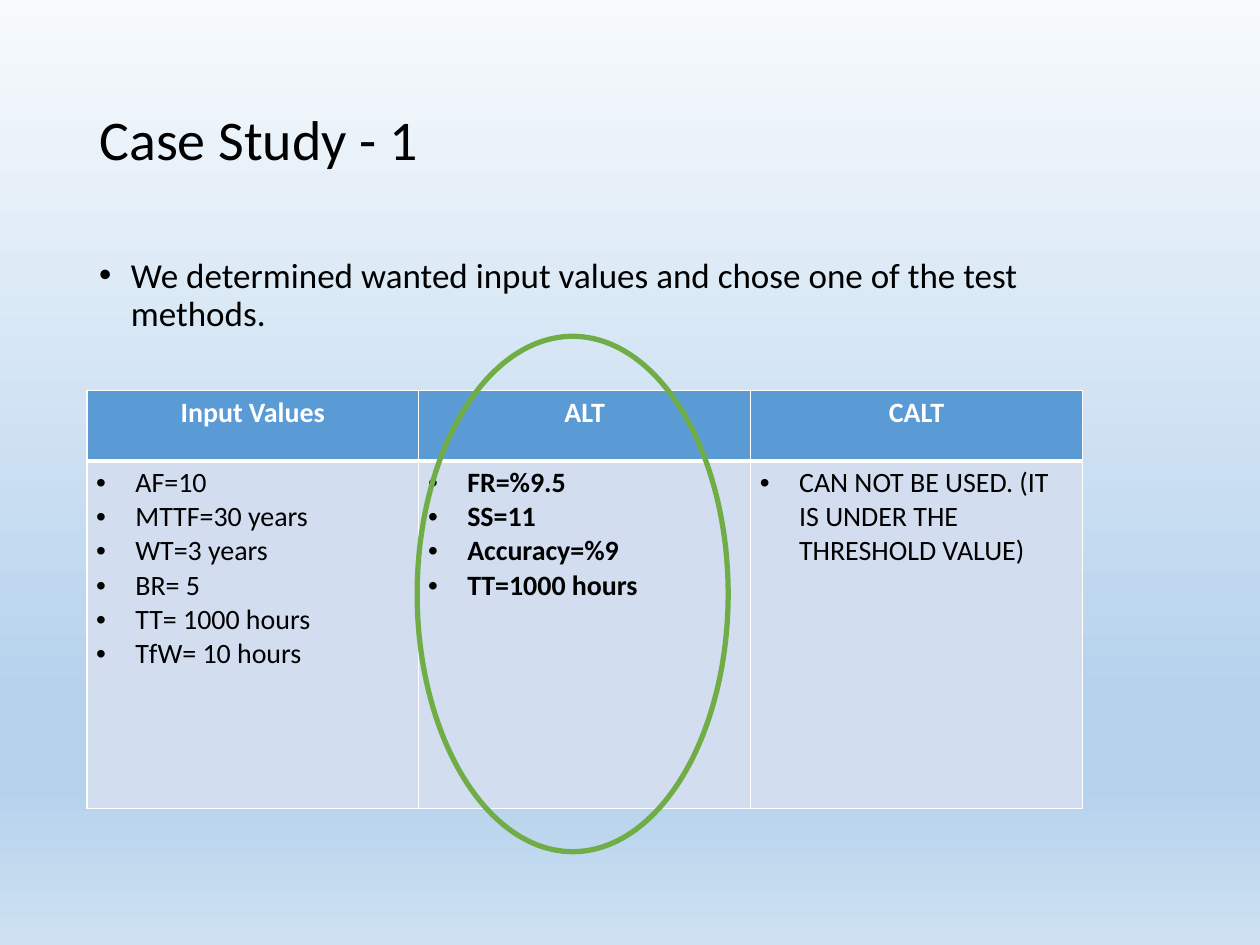
from dataclasses import dataclass

from lxml.etree import SubElement
from pptx import Presentation
from pptx.dml.color import RGBColor
from pptx.enum.shapes import MSO_SHAPE
from pptx.enum.text import MSO_ANCHOR, MSO_AUTO_SIZE, PP_ALIGN
from pptx.oxml import parse_xml
from pptx.oxml.ns import nsdecls, qn
from pptx.util import Cm, Pt


@dataclass(frozen=True)
class Theme:
    font: str = "Calibri"
    ink: str = "000000"
    white: str = "FFFFFF"
    head: str = "5B9BD5"
    body: str = "D2DEEF"
    ring: str = "70AD47"
    title: int = 32
    lead: int = 20
    cell: int = 16
    sky: tuple = ((0, "F7FAFD"), (74, "B5D2EC"), (83, "B5D2EC"), (100, "CEE1F2"))


THEME = Theme()
HEADS = ["Input Values", "ALT", "CALT"]
LISTS = [
    ["AF=10", "MTTF=30 years", "WT=3 years", "BR= 5", "TT= 1000 hours", "TfW= 10 hours"],
    ["FR=%9.5", "SS=11", "Accuracy=%9", "TT=1000 hours"],
    ["CAN NOT BE USED. (IT IS UNDER THE THRESHOLD VALUE)"],
]
CHOSEN = HEADS.index("ALT")


def style(para, size, color=THEME.ink, bold=False):
    for run in para.runs:
        font = run.font
        font.name, font.size, font.bold = THEME.font, Pt(size), bold
        font.color.rgb = RGBColor.from_string(color)


def bullet(para, indent):
    props = para._p.get_or_add_pPr()
    props.set("marL", str(indent))
    props.set("indent", str(-indent))
    SubElement(props, qn("a:buFont"), typeface="Arial")
    SubElement(props, qn("a:buChar"), char="•")


def paint_sky(slide):
    stops = "".join(
        f'<a:gs pos="{pos * 1000}"><a:srgbClr val="{color}"/></a:gs>'
        for pos, color in THEME.sky
    )
    back = parse_xml(
        f'<p:bg {nsdecls("p", "a")}><p:bgPr><a:gradFill rotWithShape="1">'
        f'<a:gsLst>{stops}</a:gsLst><a:lin ang="5400000" scaled="0"/>'
        "</a:gradFill><a:effectLst/></p:bgPr></p:bg>"
    )
    slide.element.cSld.insert(0, back)


def set_title(slide, text):
    title = slide.shapes.title
    title.left, title.top = Cm(1.75), Cm(1.02)
    title.width, title.height = Cm(21.9), Cm(3.68)
    frame = title.text_frame
    frame.text = text
    frame.auto_size = MSO_AUTO_SIZE.NONE
    frame.vertical_anchor = MSO_ANCHOR.MIDDLE
    para = frame.paragraphs[0]
    para.alignment, para.line_spacing = PP_ALIGN.LEFT, 0.9
    style(para, THEME.title)


def add_lead(slide, text):
    box = slide.shapes.add_textbox(Cm(1.75), Cm(5.08), Cm(21.9), Cm(12.09))
    frame = box.text_frame
    frame.word_wrap = True
    frame.text = text
    para = frame.paragraphs[0]
    para.line_spacing, para.space_before = 0.9, Pt(10)
    bullet(para, Cm(0.64))
    style(para, THEME.lead)


def fill_cell(cell, fill, rule):
    """Set the fill, margins and white borders; rule maps a side to points."""
    cell.fill.solid()
    cell.fill.fore_color.rgb = RGBColor.from_string(fill)
    cell.margin_left = cell.margin_right = Cm(0.19)
    cell.margin_top = cell.margin_bottom = Cm(0.1)
    props = cell._tc.get_or_add_tcPr()
    for spot, side in enumerate("LRTB"):
        line = parse_xml(
            f'<a:ln{side} {nsdecls("a")} w="{Pt(rule.get(side, 1))}"><a:solidFill>'
            f'<a:srgbClr val="{THEME.white}"/></a:solidFill></a:ln{side}>'
        )
        props.insert(spot, line)


def add_grid(slide):
    frame = slide.shapes.add_table(
        2, len(HEADS), Cm(1.75), Cm(7.87), Cm(20.07), Cm(8.43)
    )
    grid = frame.table
    grid.horz_banding = False
    grid.rows[0].height, grid.rows[1].height = Cm(1.42), Cm(7.01)
    for col, (head, items) in enumerate(zip(HEADS, LISTS)):
        # Header cell
        top = grid.cell(0, col)
        fill_cell(top, THEME.head, {"B": 3})
        top.text_frame.text = head
        para = top.text_frame.paragraphs[0]
        para.alignment = PP_ALIGN.CENTER
        style(para, THEME.cell, THEME.white, True)
        # Bulleted cell
        cell = grid.cell(1, col)
        fill_cell(cell, THEME.body, {"T": 3})
        cell.text_frame.text = "\n".join(items)
        for para in cell.text_frame.paragraphs:
            bullet(para, Cm(0.79))
            style(para, THEME.cell, bold=col == CHOSEN)


def add_ring(slide):
    ring = slide.shapes.add_shape(
        MSO_SHAPE.OVAL, Cm(8.41), Cm(6.78), Cm(6.27), Cm(10.39)
    )
    ring.shadow.inherit = False
    ring.fill.background()
    ring.line.color.rgb = RGBColor.from_string(THEME.ring)
    ring.line.width = Pt(3)


def main():
    deck = Presentation()
    deck.slide_width, deck.slide_height = Cm(25.4), Cm(19.05)
    slide = deck.slides.add_slide(deck.slide_layouts[5])
    paint_sky(slide)
    # Heading and lead sentence
    set_title(slide, "Case Study - 1")
    add_lead(slide, "We determined wanted input values and chose one of the test methods.")
    # Comparison with the chosen method ringed
    add_grid(slide)
    add_ring(slide)
    deck.save("out.pptx")


if __name__ == "__main__":
    main()
